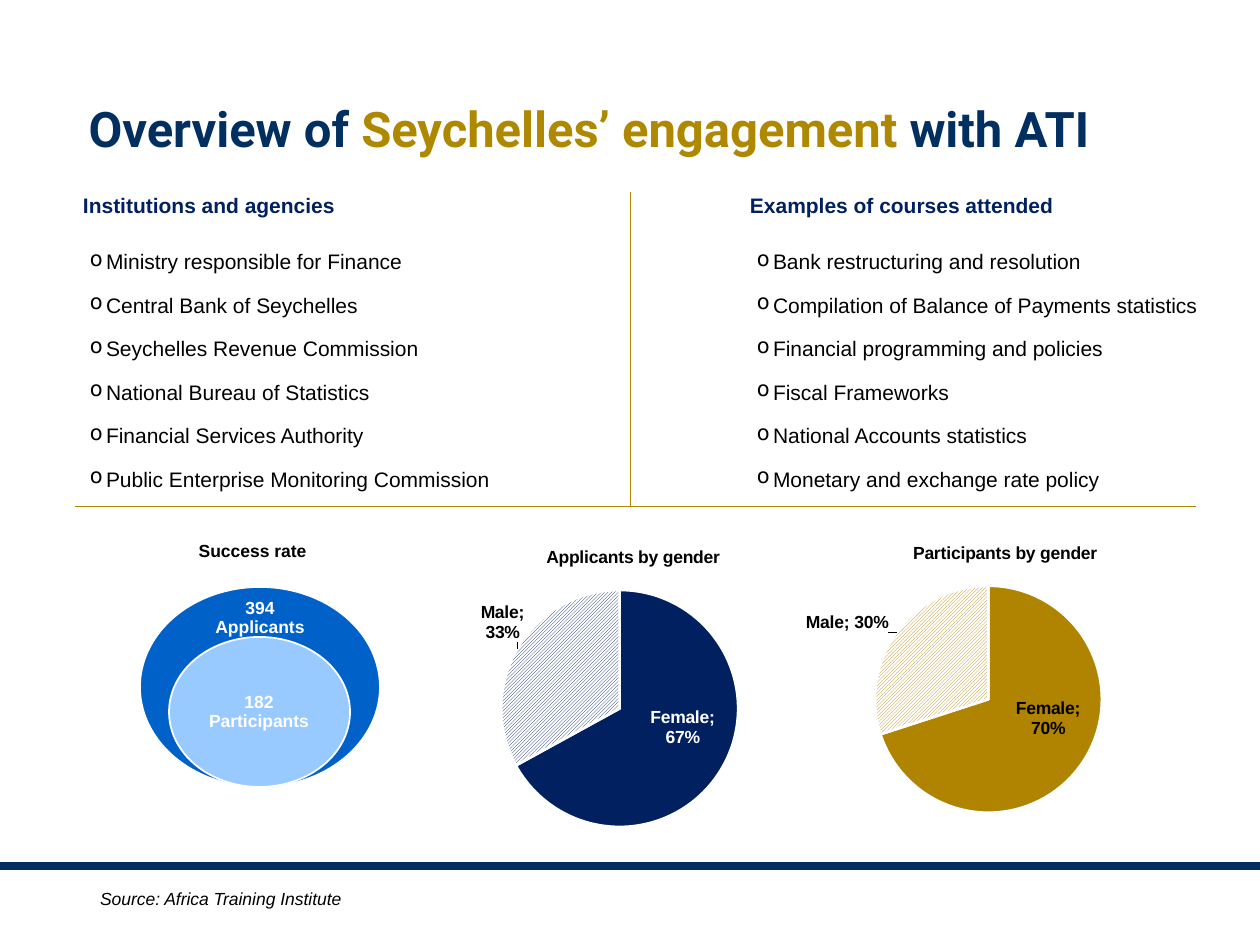
from lxml import etree
from pptx import Presentation
from pptx import util as u
from pptx.chart.data import CategoryChartData
from pptx.dml.color import RGBColor
from pptx.enum import chart as ch
from pptx.enum import dml, shapes, text
from pptx.oxml import ns

SCALE = 914400 / 126
COLORS = {
    "navy": "002F60", "ink": "002060", "gold": "AD8800", "ochre": "B08400",
    "blue": "0062C8", "sky": "98CAFF", "white": "FFFFFF", "black": "000000",
}


def px(value):
    """Turn px into EMU."""
    return u.Emu(round(value * SCALE))


def rgb(name):
    """Look up a named colour."""
    return RGBColor.from_string(COLORS[name])


def style(font, size, color, bold=False, italic=False, face="Arial"):
    """Format a font."""
    font.name, font.size, font.bold, font.italic = face, u.Pt(size), bold, italic
    font.color.rgb = rgb(color)


def add_span(para, wording, *args, **kwargs):
    """Append one formatted run to a paragraph."""
    span = para.add_run()
    span.text = wording
    style(span.font, *args, **kwargs)


def add_box(page, box, insets=(13, 6, 13, 6), anchor=text.MSO_ANCHOR.TOP):
    """Add an empty wrapping text box and return its frame."""
    frame = page.shapes.add_textbox(*map(px, box)).text_frame
    frame.word_wrap = True
    frame.vertical_anchor = anchor
    (frame.margin_left, frame.margin_top,
     frame.margin_right, frame.margin_bottom) = map(px, insets)
    return frame


def add_label(page, box, wording, size, color, align=text.PP_ALIGN.LEFT,
              inset=6, spacing=0.9, **kwargs):
    """Add a one-paragraph text box centred vertically."""
    frame = add_box(page, box, (inset,) * 4, text.MSO_ANCHOR.MIDDLE)
    para = frame.paragraphs[0]
    para.alignment, para.line_spacing = align, spacing
    add_span(para, wording, size, color, **kwargs)


def add_filled(page, kind, box, fill, line=None):
    """Add a filled preset shape."""
    shape = page.shapes.add_shape(kind, *map(px, box))
    shape.shadow.inherit = False
    shape.fill.solid()
    shape.fill.fore_color.rgb = rgb(fill)
    if line:
        shape.line.color.rgb = rgb(line)
        shape.line.width = u.Pt(1)
    else:
        shape.line.fill.background()


def add_rule(page, *ends):
    """Draw a thin gold line."""
    rule = page.shapes.add_connector(shapes.MSO_CONNECTOR.STRAIGHT, *map(px, ends))
    rule.line.color.rgb = rgb("gold")
    rule.line.width = u.Pt(0.5)
    etree.SubElement(rule._element.spPr, ns.qn("a:effectLst"))


def add_title(page, box):
    """Place the two-colour slide title."""
    title = page.shapes.title
    title.left, title.top, title.width, title.height = map(px, box)
    frame = title.text_frame
    frame.auto_size = text.MSO_AUTO_SIZE.NONE
    frame.vertical_anchor = text.MSO_ANCHOR.BOTTOM
    para = frame.paragraphs[0]
    para.alignment, para.line_spacing = text.PP_ALIGN.LEFT, 0.9
    for wording, color in (("Overview of ", "navy"),
                           ("Seychelles’ engagement ", "gold"),
                           ("with ATI", "navy")):
        add_span(para, wording, 28, color, bold=True, face="Roboto")


def add_list(page, box, heading, items):
    """Place a heading above a bulleted list."""
    left, top, width, height = box
    add_label(page, (left + 3, top + 3, width - 6, 46), heading, 12, "ink", bold=True)
    frame = add_box(page, (left, top + 53, width, height - 53), (16, 2, 11, 2))
    for index, item in enumerate(items):
        para = frame.add_paragraph() if index else frame.paragraphs[0]
        para.line_spacing, para.space_after = 1.5, u.Pt(3.3)
        props = para._p.get_or_add_pPr()
        props.set("marL", str(px(16)))
        props.set("indent", str(-px(16)))
        etree.SubElement(props, ns.qn("a:buChar")).set("char", "o")
        add_span(para, item, 12, "black")


def add_success(page, box):
    """Place the nested ellipses with their caption."""
    left, top, width, height = box
    oval = shapes.MSO_SHAPE.OVAL
    center = text.PP_ALIGN.CENTER
    add_label(page, (left + 7, top, 211, 29), "Success rate", 10, "black",
              center, spacing=1, bold=True)
    add_filled(page, oval, (left, top + 51, width, height - 51), "blue", "white")
    add_label(page, (left + 57, top + 65, 126, 34), "394 Applicants", 10, "white",
              center, 10, bold=True)
    add_filled(page, oval, (left + 29, top + 101, 181, 150), "sky", "white")
    add_label(page, (left + 55, top + 138, 128, 76), "182 Participants", 10, "white",
              center, 10, bold=True)


def set_layout(parent, after, target=None, **fractions):
    """Give a chart part a manual layout behind the given sibling."""
    for old in parent.findall(ns.qn("c:layout")):
        parent.remove(old)
    layout = etree.Element(ns.qn("c:layout"))
    manual = etree.SubElement(layout, ns.qn("c:manualLayout"))
    if target:
        etree.SubElement(manual, ns.qn("c:layoutTarget")).set("val", target)
    if target or after == "c:tx":
        for mode in ("xMode", "yMode"):
            etree.SubElement(manual, ns.qn("c:" + mode)).set("val", "edge")
    for key, value in fractions.items():
        etree.SubElement(manual, ns.qn("c:" + key)).set("val", f"{value:.3f}")
    sibling = parent.find(ns.qn(after)) if after else None
    if sibling is None:
        parent.insert(0, layout)
    else:
        sibling.addnext(layout)


def add_pie(page, box, caption, shares, color, label_color, caption_at, pie, shifts):
    """Place a gender pie whose parts are laid out in px inside its box."""
    width, height = box[2:]
    data = CategoryChartData(number_format="0%")
    data.categories = ["Female", "Male"]
    data.add_series("Series 1", shares)
    chart = page.shapes.add_chart(ch.XL_CHART_TYPE.PIE, *map(px, box), data).chart
    chart.has_legend = False
    style(chart.font, 10, "black")
    chart.has_title = True
    add_span(chart.chart_title.text_frame.paragraphs[0], caption, 10, "black", bold=True)
    set_layout(chart.chart_title._element, "c:tx",
               x=caption_at[0] / width, y=caption_at[1] / height)
    left, top, size = pie
    set_layout(chart._chartSpace.chart.plotArea, None, "inner",
               x=left / width, y=top / height, w=size / width, h=size / height)
    plot = chart.plots[0]
    plot.vary_by_categories = True
    places = ch.XL_LABEL_POSITION
    looks = ((label_color, places.CENTER), ("black", places.OUTSIDE_END))
    for index, (ink, place) in enumerate(looks):
        point = plot.series[0].points[index]
        point.format.line.color.rgb = rgb("white")
        point.format.line.width = u.Pt(1.5)
        fill = point.format.fill
        if index:
            fill.patterned()
            fill.pattern = dml.MSO_PATTERN.DARK_UPWARD_DIAGONAL
            fill.back_color.rgb = rgb("white")
        else:
            fill.solid()
        fill.fore_color.rgb = rgb(color)
        style(point.data_label.font, 10, ink, bold=True)
        point.data_label.position = place
        label = point.data_label._dLbl
        label.find(ns.qn("c:showCatName")).set("val", "1")
        label.find(ns.qn("c:showPercent")).set("val", "0")
        etree.SubElement(label, ns.qn("c:separator")).text = "; "
        dx, dy = shifts[index]
        set_layout(label, "c:idx", x=dx / width, y=dy / height)


def main():
    """Build the slide and save it."""
    deck = Presentation()
    deck.slide_width, deck.slide_height = px(1260), px(945)
    page = deck.slides.add_slide(deck.slide_layouts[5])
    add_filled(page, shapes.MSO_SHAPE.RECTANGLE, (0, 862, 1260, 8), "navy")
    add_title(page, (76, 86, 1080, 78))
    add_pie(page, (436, 514, 388, 344), "Applicants by gender", (0.67, 0.33), "ink",
            "white", (107, 29), (65, 76, 237), ((12, -11), (13, -2)))
    add_pie(page, (788, 505, 422, 344), "Participants by gender", (0.7, 0.3), "ochre",
            "black", (122, 33), (87, 81, 227), ((14, -14), (-2, 4)))
    add_list(page, (74, 181, 514, 299), "Institutions and agencies", (
        "Ministry responsible for Finance", "Central Bank of Seychelles",
        "Seychelles Revenue Commission", "National Bureau of Statistics",
        "Financial Services Authority", "Public Enterprise Monitoring Commission"))
    add_list(page, (741, 181, 514, 299), "Examples of courses attended", (
        "Bank restructuring and resolution",
        "Compilation of Balance of Payments statistics",
        "Financial programming and policies", "Fiscal Frameworks",
        "National Accounts statistics", "Monetary and exchange rate policy"))
    add_success(page, (140, 536, 240, 251))
    add_rule(page, 630, 506, 630, 192)
    add_rule(page, 75, 506, 1196, 506)
    add_label(page, (87, 881, 621, 34), "Source: Africa Training Institute", 10,
              "black", inset=13, spacing=1, italic=True)
    deck.save("out.pptx")


if __name__ == "__main__":
    main()
